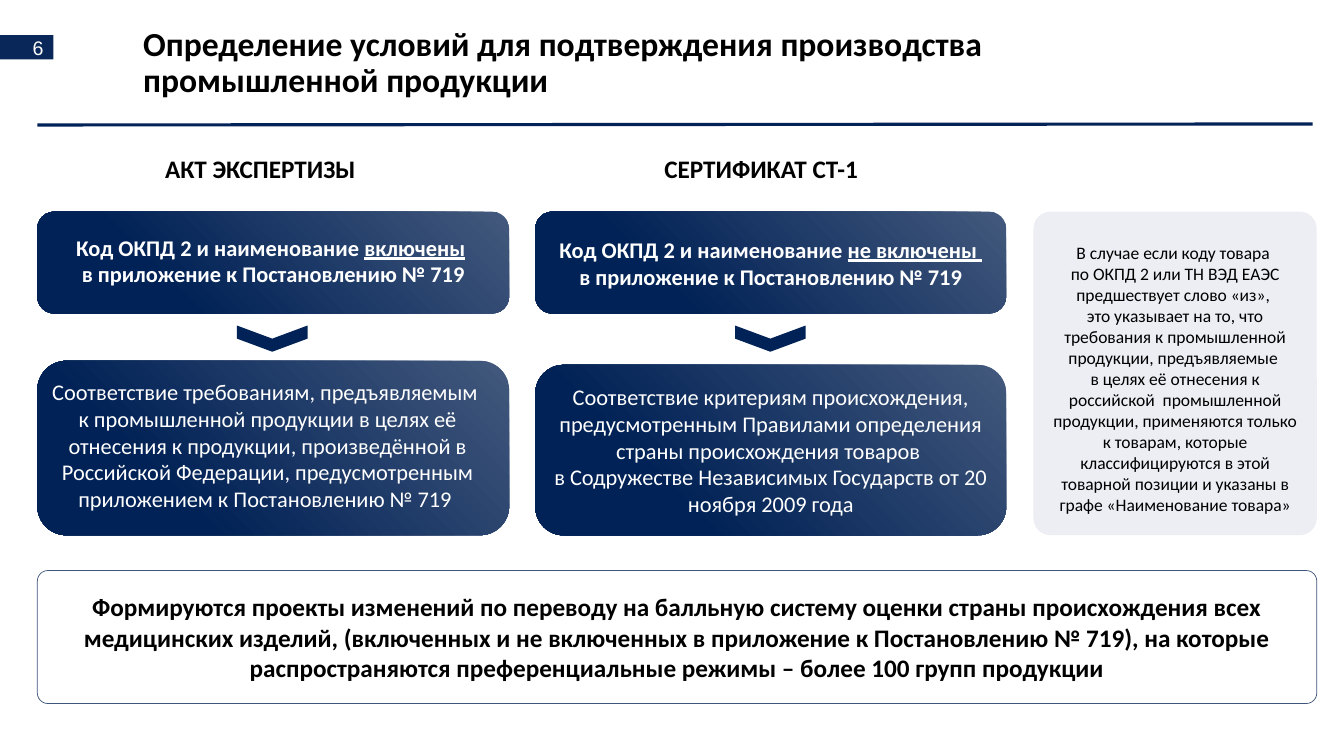
from lxml import etree
from pptx import Presentation
from pptx.dml.color import RGBColor
from pptx.enum.shapes import MSO_CONNECTOR, MSO_SHAPE
from pptx.enum.text import MSO_ANCHOR, MSO_AUTO_SIZE, PP_ALIGN
from pptx.oxml.ns import qn
from pptx.util import Pt

PX = 9144
COLORS = {
    "black": "000000",
    "white": "FFFFFF",
    "number": "092859",
    "navy": "012256",
    "slate": "43597D",
    "note": "EDEEF4",
    "frame": "40557B",
    "rule": "022357",
}
LEFT, CENTER, RIGHT = PP_ALIGN.LEFT, PP_ALIGN.CENTER, PP_ALIGN.RIGHT
TOP, MIDDLE = MSO_ANCHOR.TOP, MSO_ANCHOR.MIDDLE
RECTANGLE, ROUNDED = MSO_SHAPE.RECTANGLE, MSO_SHAPE.ROUNDED_RECTANGLE
CHEVRON = MSO_SHAPE.CHEVRON
STRAIGHT = MSO_CONNECTOR.STRAIGHT
TITLE_ONLY = 5

TITLE = "Определение условий для подтверждения производства промышленной продукции"
HEADINGS = [
    ((154, 147, 223, 40), "АКТ ЭКСПЕРТИЗЫ"),
    ((649, 147, 231, 40), "СЕРТИФИКАТ СТ-1"),
]
PANELS = [
    (37, 210, 468, 101),
    (37, 358, 468, 173),
    (531, 210, 467, 101),
    (531, 362, 467, 169),
]
CHEVRONS = [(257, 301, 26, 70), (751, 301, 26, 70)]
CODES = [
    ((37, 227, 468, 64), "включены", " \n"),
    ((531, 229, 467, 64), "не включены ", "\n"),
]
REQUIREMENTS = [
    ((27, 370, 477, 145), TOP,
     "Соответствие требованиям, предъявляемым \nк промышленной продукции в целях её "
     "отнесения к продукции, произведённой в Российской Федерации, предусмотренным "
     "приложением к Постановлению № 719 "),
    ((531, 362, 467, 169), MIDDLE,
     "Соответствие критериям происхождения, предусмотренным Правилами определения "
     "страны происхождения товаров \nв Содружестве Независимых Государств от 20 "
     "ноября 2009 года"),
]
NOTE = (
    "В случае если коду товара \nпо ОКПД 2 или ТН ВЭД ЕАЭС предшествует слово «из», \n"
    "это указывает на то, что требования к промышленной продукции, предъявляемые \n"
    "в целях её отнесения к российской  промышленной продукции, применяются только "
    "к товарам, которые классифицируются в этой товарной позиции и указаны в графе "
    "«Наименование товара»"
)
CONCLUSION = (
    "Формируются проекты изменений по переводу на балльную систему оценки страны "
    "происхождения всех медицинских изделий, (включенных и не включенных в приложение "
    "к Постановлению № 719), на которые распространяются преференциальные режимы – "
    "более 100 групп продукции"
)


def emu(box):
    """Turn px lengths into EMU."""
    return [value * PX for value in box]


def rgb(name):
    """Return the named colour."""
    return RGBColor.from_string(COLORS[name])


def write(shape, text, size=16, color="black", font="Calibri", bold=False,
          align=CENTER, anchor=TOP, spacing=None, underlined=None):
    """Write one paragraph, underlining the given part of the text."""
    frame = shape.text_frame
    frame.word_wrap = True
    frame.auto_size = MSO_AUTO_SIZE.NONE
    frame.vertical_anchor = anchor
    paragraph = frame.paragraphs[0]
    paragraph.alignment = align
    paragraph.line_spacing = spacing
    before, mark, after = text.partition(underlined) if underlined else (text, "", "")
    for part in filter(None, (before, mark, after)):
        for index, line in enumerate(part.split("\n")):
            if index:
                paragraph.add_line_break()
            if not line:
                continue
            run = paragraph.add_run()
            run.text = line
            run.font.name = font
            run.font.size = Pt(size)
            run.font.bold = bold
            run.font.underline = part == underlined
            run.font.color.rgb = rgb(color)


def add_text(slide, box, text, **style):
    """Add a text box."""
    write(slide.shapes.add_textbox(*emu(box)), text, **style)


def add_block(slide, kind, box, fill=None, line=None, corner=None):
    """Add a flat preset shape."""
    shape = slide.shapes.add_shape(kind, *emu(box))
    shape.shadow.inherit = False
    if fill:
        shape.fill.solid()
        shape.fill.fore_color.rgb = rgb(fill)
    else:
        shape.fill.background()
    if line:
        shape.line.color.rgb = rgb(line)
        shape.line.width = Pt(0.5)
    else:
        shape.line.fill.background()
    if corner is not None:
        shape.adjustments[0] = corner
    return shape


def add_panel(slide, box):
    """Add a rounded panel that brightens from its lower left corner."""
    panel = add_block(slide, ROUNDED, box)
    panel.fill.gradient()
    for stop, position, name in zip(panel.fill.gradient_stops, (0.27, 1), ("navy", "slate")):
        stop.position = position
        stop.color.rgb = rgb(name)
    gradient = panel.element.spPr.find(qn("a:gradFill"))
    gradient.remove(gradient.find(qn("a:lin")))
    circle = etree.SubElement(gradient, qn("a:path"), path="circle")
    etree.SubElement(circle, qn("a:fillToRect"), t="100000", r="100000")
    return panel


def add_rule(slide, start, end):
    """Add the line under the title."""
    rule = slide.shapes.add_connector(STRAIGHT, *emu(start + end))
    rule.line.color.rgb = rgb("rule")
    rule.line.width = Pt(2.25)
    etree.SubElement(rule.element.spPr, qn("a:effectLst"))


def add_title(slide, box, text):
    """Place and fill the title placeholder."""
    title = slide.shapes.title
    title.left, title.top, title.width, title.height = emu(box)
    write(title, text, size=24, bold=True, align=LEFT, spacing=0.9)


def main():
    """Build the slide and save it."""
    presentation = Presentation()
    presentation.slide_width, presentation.slide_height = emu((1333, 750))
    slide = presentation.slides.add_slide(presentation.slide_layouts[TITLE_ONLY])

    number = add_block(slide, RECTANGLE, (0, 35, 53, 24), fill="number")
    write(number, "6", size=14, color="white", font="Arial", align=RIGHT, anchor=MIDDLE)
    add_title(slide, (132, 22, 949, 83), TITLE)
    add_rule(slide, (37, 124), (1302, 123))

    for box, heading in HEADINGS:
        add_text(slide, box, heading, size=18, bold=True, align=LEFT)
    for box in PANELS:
        add_panel(slide, box)
    for box in CHEVRONS:
        add_block(slide, CHEVRON, box, fill="navy").rotation = 90
    for box, status, ending in CODES:
        text = f"Код ОКПД 2 и наименование {status}{ending}в приложение к Постановлению № 719"
        add_text(slide, box, text, color="white", bold=True, underlined=status)
    for box, anchor, text in REQUIREMENTS:
        add_text(slide, box, text, color="white", anchor=anchor)

    add_block(slide, ROUNDED, (1025, 210, 281, 321), fill="note", corner=0.06)
    add_text(slide, (1029, 235, 273, 284), NOTE, size=12.5)
    conclusion = add_block(slide, ROUNDED, (37, 566, 1269, 132), line="frame", corner=0.08)
    write(conclusion, CONCLUSION, size=18, bold=True, anchor=MIDDLE)

    presentation.save("out.pptx")


if __name__ == "__main__":
    main()
